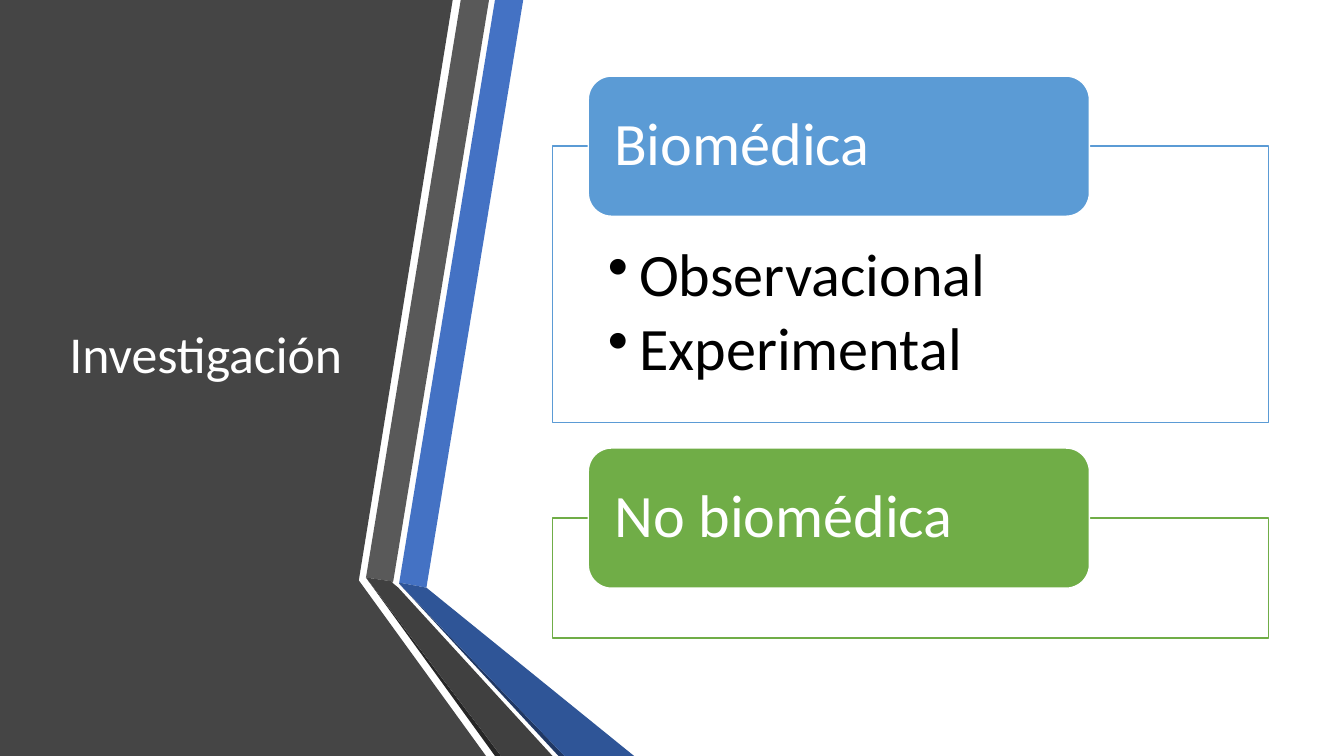
from dataclasses import dataclass

from lxml.etree import SubElement
from pptx import Presentation
from pptx.dml.color import RGBColor as Rgb
from pptx.enum.shapes import MSO_SHAPE as Kind
from pptx.enum.text import MSO_ANCHOR as Anchor, PP_ALIGN as Align
from pptx.oxml.ns import qn
from pptx.util import Inches, Pt


@dataclass(frozen=True)
class Theme:
    """Colours, font and type sizes of the slide."""
    font: str = "Calibri"
    title: int = 37
    body: int = 43
    white: str = "FFFFFF"
    black: str = "000000"
    panel: str = "454545"
    blue: str = "4472C4"
    navy: str = "2F5597"
    deep: str = "203864"
    gray: str = "595959"
    dark: str = "404040"
    ink: str = "262626"
    sky: str = "5B9BD5"
    green: str = "70AD47"


THEME = Theme()


def write(shape, lines, size, color, inset, anchor=Anchor.MIDDLE, after=0, bullet=None):
    """Write lines into a shape, with an optional bullet."""
    frame = shape.text_frame
    frame.word_wrap = True
    frame.vertical_anchor = anchor
    (frame.margin_left, frame.margin_top,
     frame.margin_right, frame.margin_bottom) = map(Inches, inset)
    for i, line in enumerate(lines):
        para = frame.add_paragraph() if i else frame.paragraphs[0]
        para.alignment = Align.LEFT
        para.line_spacing = 0.9
        para.space_after = Pt(after * size)
        run = para.add_run()
        run.text = line
        run.font.name = THEME.font
        run.font.size = Pt(size)
        run.font.color.rgb = Rgb.from_string(color)
        if bullet:
            props = para._p.get_or_add_pPr()
            props.set("marL", str(Inches(0.31)))
            props.set("indent", str(-Inches(0.31)))
            SubElement(props, qn("a:buChar"), char=bullet)


def paint(shape, fill, line=None, alpha=None):
    """Set the fill and outline of a shape."""
    shape.shadow.inherit = False
    shape.fill.solid()
    shape.fill.fore_color.rgb = Rgb.from_string(fill)
    if alpha:
        tone = shape._element.spPr.find(qn("a:solidFill"))[0]
        SubElement(tone, qn("a:alpha"), val=str(alpha * 1000))
    if line:
        shape.line.color.rgb = Rgb.from_string(line)
        shape.line.width = Pt(1)
    else:
        shape.line.fill.background()


def outline(shapes, box, points, fill):
    """Draw a closed polygon with points relative to the box."""
    left, top = box
    spots = [(Inches(left + x), Inches(top + y)) for x, y in points]
    pen = shapes.build_freeform(*spots[0], scale=1)
    pen.add_line_segments(spots[1:], close=True)
    paint(pen.convert_to_shape(), fill)


def side(shapes, box):
    """Draw the dark side panel, its folded bands and the title."""
    left, top = box
    bands = [
        (THEME.panel, [(0, 0), (4.49, 0), (3.56, 5.75), (3.56, 5.76), (4.82, 7.5), (0, 7.5)]),
        (THEME.blue, [(3.96, 5.78), (4.23, 5.83), (5.19, 0), (4.91, 0)]),
        (THEME.gray, [(4.85, 0), (4.57, 0), (3.63, 5.73), (3.9, 5.77)]),
        (THEME.ink, [(3.63, 5.73), (4.91, 7.5), (4.97, 7.5)]),
        (THEME.deep, [(3.96, 5.79), (5.54, 7.5), (5.6, 7.5)]),
        (THEME.navy, [(3.96, 5.79), (5.6, 7.5), (6.29, 7.5), (4.23, 5.83), (3.96, 5.78)]),
        (THEME.dark, [(5.48, 7.5), (3.95, 5.83), (3.89, 5.78), (3.9, 5.77),
                      (3.63, 5.73), (4.97, 7.5)]),
    ]
    for fill, points in bands:
        outline(shapes, box, points, fill)
    title = shapes.add_textbox(Inches(left + 0.59), Inches(top + 0.75), Inches(3.04), Inches(5.58))
    write(title, ["Investigación"], THEME.title, THEME.white, (0.1, 0.05, 0.1, 0.05))


def card(shapes, box, head, items, color):
    """Draw a framed list with a rounded heading over its top edge."""
    left, top, width, height = box
    tall = 1.39
    frame = shapes.add_shape(Kind.RECTANGLE, *map(Inches, box))
    paint(frame, THEME.white, color, alpha=90)
    if items:
        write(frame, items, THEME.body, THEME.black, (0.55, 0.98, 0.55, 0.33),
              anchor=Anchor.TOP, after=0.15, bullet="•")
    tab = shapes.add_shape(Kind.ROUNDED_RECTANGLE, Inches(left + 0.05 * width),
                           Inches(top - tall / 2), Inches(0.7 * width), Inches(tall))
    paint(tab, color, THEME.white)
    write(tab, [head], THEME.body, THEME.white, (0.19, 0, 0.19, 0))


def main():
    """Build and save the slide."""
    deck = Presentation()
    deck.slide_width, deck.slide_height = Inches(13.33), Inches(7.5)
    shapes = deck.slides.add_slide(deck.slide_layouts[6]).shapes
    side(shapes, (0, 0))
    card(shapes, (5.48, 1.45, 7.1, 2.74), "Biomédica",
         ["Observacional", "Experimental"], THEME.sky)
    card(shapes, (5.48, 5.14, 7.1, 1.19), "No biomédica", [], THEME.green)
    deck.save("out.pptx")


if __name__ == "__main__":
    main()
